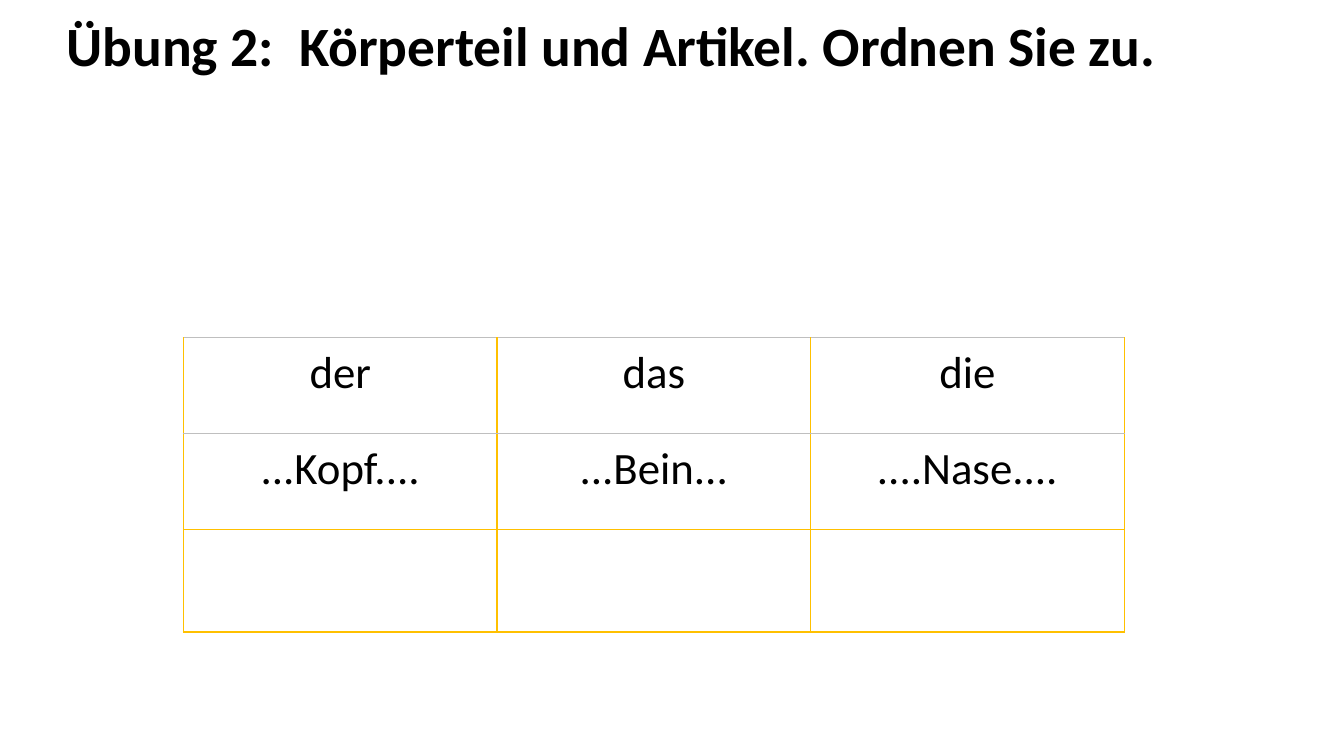
from lxml.etree import SubElement
from pptx import Presentation
from pptx.dml.color import RGBColor
from pptx.enum.text import MSO_ANCHOR, PP_ALIGN
from pptx.oxml.ns import qn
from pptx.util import Inches, Pt

BLACK = RGBColor(0x00, 0x00, 0x00)
GOLD = RGBColor(0xFF, 0xC0, 0x00)
GREY = RGBColor(0xBF, 0xBF, 0xBF)

ARTICLE_ROWS = [
    ["der", "das", "die"],
    ["...Kopf....", "...Bein...", "....Nase...."],
    ["", "", ""],
]
ROW_HEIGHTS = [0.95, 0.95, 1.02]
COLUMN_WIDTH = 3.11


class ExerciseSlide:
    """Holds the text style and the slide being filled."""

    font_name = "Calibri"

    def __init__(self, presentation):
        self.slide = presentation.slides.add_slide(presentation.slide_layouts[5])

    def format_paragraph(self, paragraph, size, bold, alignment, spacing):
        paragraph.alignment = alignment
        paragraph.line_spacing = spacing
        for run in paragraph.runs:
            run.font.name = self.font_name
            run.font.size = Pt(size)
            run.font.bold = bold
            run.font.color.rgb = BLACK

    def add_title(self, text, left, top, width, height):
        title = self.slide.shapes.title
        title.left, title.top = Inches(left), Inches(top)
        title.width, title.height = Inches(width), Inches(height)
        text_frame = title.text_frame
        text_frame.text = text
        text_frame.word_wrap = True
        text_frame.vertical_anchor = MSO_ANCHOR.MIDDLE
        self.format_paragraph(text_frame.paragraphs[0], 39.6, True, PP_ALIGN.LEFT, 0.9)

    def set_borders(self, cell, colors):
        properties = cell._tc.get_or_add_tcPr()
        for side, color in zip(("lnL", "lnR", "lnT", "lnB"), colors):
            line = SubElement(properties, qn(f"a:{side}"), w=str(Pt(1)))
            fill = SubElement(line, qn("a:solidFill"))
            SubElement(fill, qn("a:srgbClr"), val=str(color))

    def fill_cell(self, cell, text, top_color, bottom_color):
        self.set_borders(cell, (GOLD, GOLD, top_color, bottom_color))
        cell.fill.background()
        cell.margin_left = cell.margin_right = Inches(0.07)
        cell.margin_top = cell.margin_bottom = Inches(0)
        if text:
            cell.text_frame.text = text
            paragraph = cell.text_frame.paragraphs[0]
            self.format_paragraph(paragraph, 32, False, PP_ALIGN.CENTER, 1.15)
            paragraph.space_after = Pt(10)

    def add_table(self, rows, left, top, column_width, row_heights, rule_colors):
        column_count = len(rows[0])
        frame = self.slide.shapes.add_table(
            len(rows), column_count, Inches(left), Inches(top),
            Inches(column_width * column_count), Inches(sum(row_heights)))
        table = frame.table
        table.first_row = table.horz_banding = False
        for column in table.columns:
            column.width = Inches(column_width)
        for row_index, texts in enumerate(rows):
            table.rows[row_index].height = Inches(row_heights[row_index])
            for column_index, text in enumerate(texts):
                self.fill_cell(table.cell(row_index, column_index), text,
                               rule_colors[row_index], rule_colors[row_index + 1])


def main():
    presentation = Presentation()
    presentation.slide_width = Inches(13.33)
    presentation.slide_height = Inches(7.5)
    exercise = ExerciseSlide(presentation)

    # Exercise title
    exercise.add_title("Übung 2:  Körperteil und Artikel. Ordnen Sie zu.",
                       0.56, 0.19, 11.5, 0.59)

    # Article table, with grey rules around the header row
    exercise.add_table(ARTICLE_ROWS, 1.82, 3.35, COLUMN_WIDTH, ROW_HEIGHTS,
                       [GREY, GREY, GOLD, GOLD])

    presentation.save("out.pptx")


if __name__ == "__main__":
    main()
